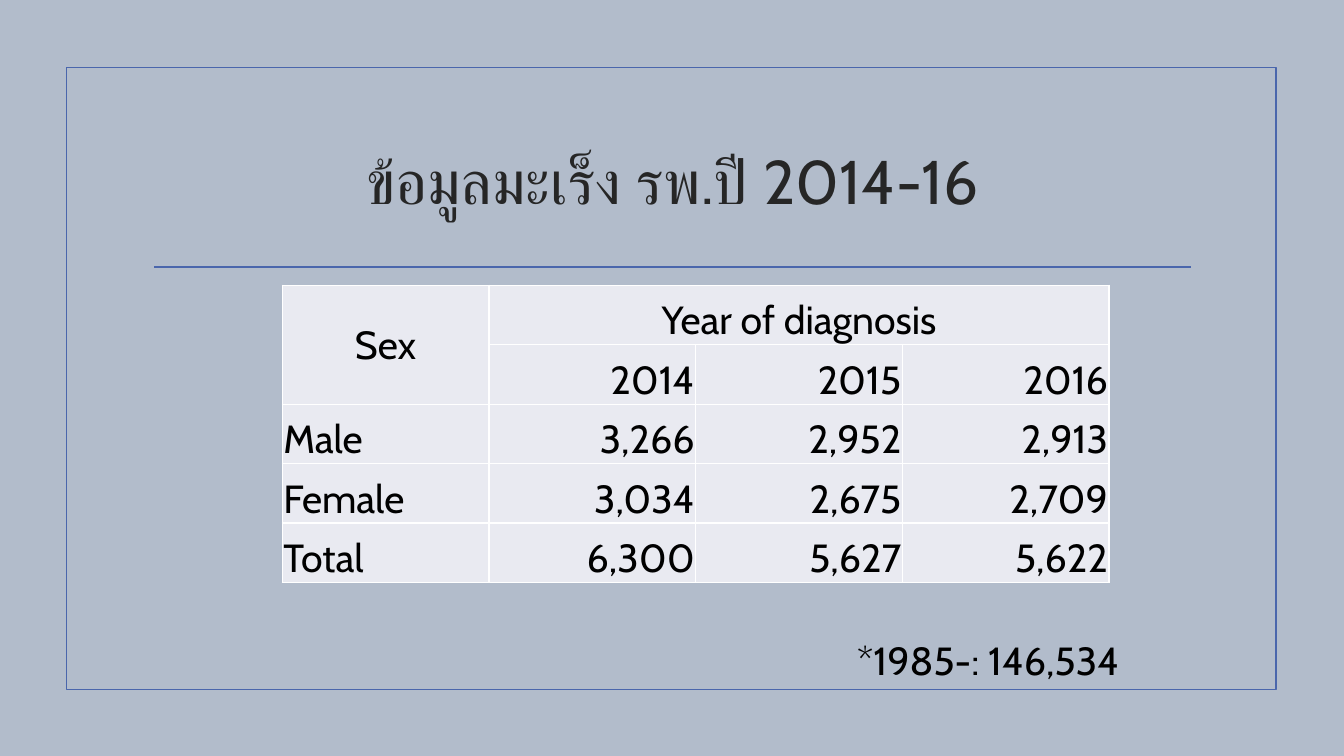
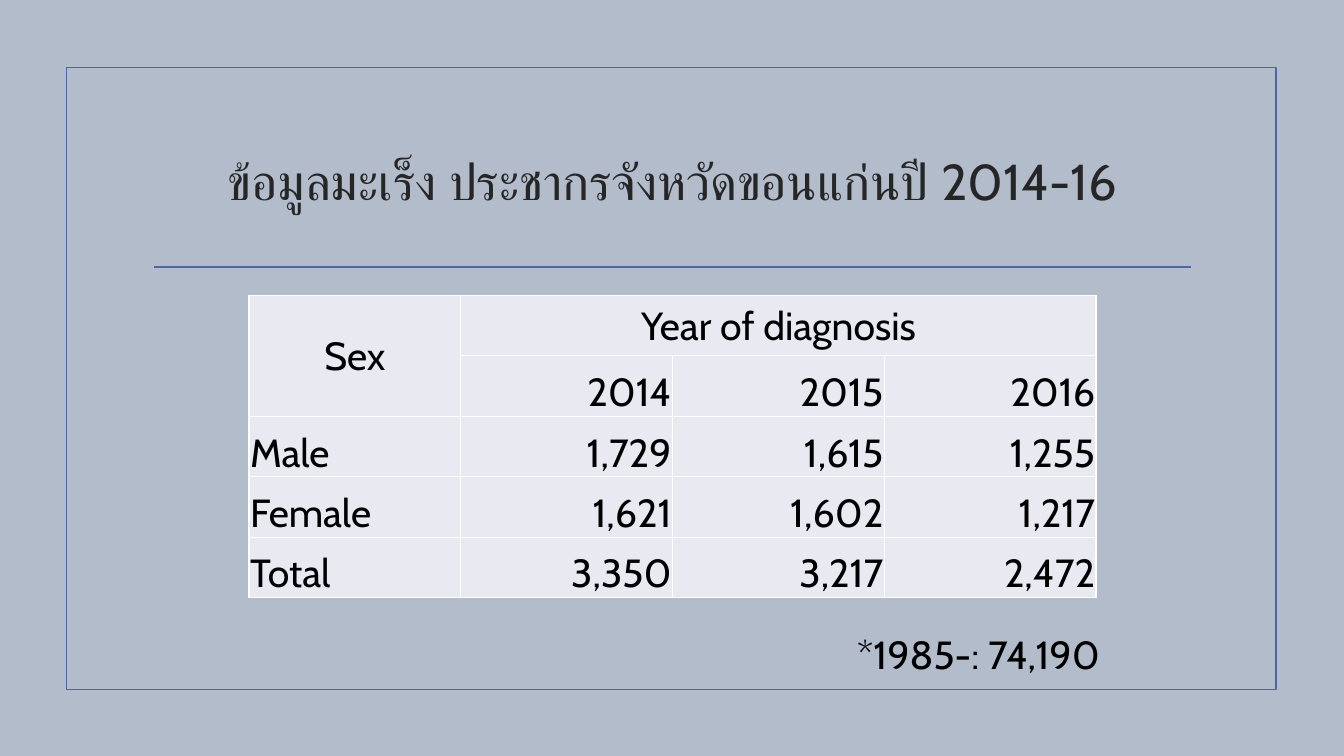
from dataclasses import dataclass
from typing import Any

from lxml import etree
from pptx import Presentation
from pptx.dml.color import RGBColor
from pptx.enum.shapes import MSO_CONNECTOR, MSO_SHAPE
from pptx.enum.text import MSO_ANCHOR, MSO_AUTO_SIZE, PP_ALIGN
from pptx.oxml.ns import qn
from pptx.util import Inches, Pt

STRAIGHT = MSO_CONNECTOR.STRAIGHT
RECT = MSO_SHAPE.RECTANGLE
TOP, MIDDLE, BOTTOM = MSO_ANCHOR.TOP, MSO_ANCHOR.MIDDLE, MSO_ANCHOR.BOTTOM
LEFT, CENTER, RIGHT = PP_ALIGN.LEFT, PP_ALIGN.CENTER, PP_ALIGN.RIGHT
GROW = MSO_AUTO_SIZE.SHAPE_TO_FIT_TEXT
FIXED = MSO_AUTO_SIZE.NONE

COLORS = {
    "back": "B2BCCB",
    "line": "4A66AC",
    "title": "262626",
    "text": "000000",
    "cell": "E9EAF1",
    "grid": "FFFFFF",
}
FONT = "Cabin"
BODY = 28
PAD = {
    "margin_left": Inches(0.01),
    "margin_top": Inches(0.01),
    "margin_right": Inches(0.01),
    "margin_bottom": Inches(0),
}


@dataclass
class Page:
    title: str
    size: int
    left: float
    top: float
    col: float
    row: float
    head: Any
    counts: list[list[str]]
    note: str
    base: float


PAGES = [
    Page("ข้อมูลมะเร็ง รพ.ปี 2014-16", 44, 2.8, 2.83, 2.05, 0.59, BOTTOM,
         [["Male", "3,266", "2,952", "2,913"],
          ["Female", "3,034", "2,675", "2,709"],
          ["Total", "6,300", "5,627", "5,622"]],
         "*1985-: 146,534", 6.26),
    Page("ข้อมูลมะเร็ง ประชากรจังหวัดขอนแก่นปี 2014-16", 36, 2.47, 2.93, 2.1, 0.6, MIDDLE,
         [["Male", "1,729", "1,615", "1,255"],
          ["Female", "1,621", "1,602", "1,217"],
          ["Total", "3,350", "3,217", "2,472"]],
         "*1985-: 74,190", 6.2),
]


def color(name: str) -> RGBColor:
    return RGBColor.from_string(COLORS[name])


def apply(item: Any, values: dict[str, Any]) -> None:
    for key, value in values.items():
        setattr(item, key, value)


def write(frame: Any, text: str, size: int, tint: str, align: Any) -> None:
    para = frame.paragraphs[0]
    para.alignment = align
    run = para.add_run()
    run.text = text
    apply(run.font, {"name": FONT, "size": Pt(size)})
    run.font.color.rgb = color(tint)


def stroke(shape: Any) -> None:
    shape.line.color.rgb = color("line")
    shape.line.width = Pt(1.25)


def add_frame(slide: Any) -> None:
    slide.background.fill.solid()
    slide.background.fill.fore_color.rgb = color("back")
    border = slide.shapes.add_shape(RECT, Inches(0.66), Inches(0.67), Inches(12), Inches(6.17))
    border.shadow.inherit = False
    border.fill.background()
    stroke(border)
    rule = slide.shapes.add_connector(STRAIGHT, Inches(1.53), Inches(2.65),
                                      Inches(11.81), Inches(2.65))
    stroke(rule)
    etree.SubElement(rule._element.spPr, qn("a:effectLst"))


def add_text(slide: Any, box: tuple[float, ...], text: str, size: int,
             tint: str, align: Any, form: dict[str, Any]) -> None:
    frame = slide.shapes.add_textbox(*map(Inches, box)).text_frame
    apply(frame, {"word_wrap": True, **form})
    write(frame, text, size, tint, align)


def add_grid(cell: Any) -> None:
    props = cell._tc.get_or_add_tcPr()
    for side in ("lnL", "lnR", "lnT", "lnB"):
        line = etree.SubElement(props, qn(f"a:{side}"), w=str(Pt(1)))
        fill = etree.SubElement(line, qn("a:solidFill"))
        etree.SubElement(fill, qn("a:srgbClr"), val=COLORS["grid"])


def add_counts(slide: Any, page: Page) -> None:
    rows = [["Sex", "Year of diagnosis", "", ""], ["", "2014", "2015", "2016"], *page.counts]
    high, wide = len(rows), len(rows[0])
    table = slide.shapes.add_table(high, wide, Inches(page.left), Inches(page.top),
                                   Inches(page.col * wide), Inches(page.row * high)).table
    apply(table, {"first_row": False, "horz_banding": False})
    for col in table.columns:
        col.width = Inches(page.col)
    for row in table.rows:
        row.height = Inches(page.row)
    table.cell(0, 0).merge(table.cell(1, 0))
    table.cell(0, 1).merge(table.cell(0, wide - 1))
    for r, row in enumerate(rows):
        for c, text in enumerate(row):
            cell = table.cell(r, c)
            add_grid(cell)
            cell.fill.solid()
            cell.fill.fore_color.rgb = color("cell")
            anchor = BOTTOM if r else page.head if c else MIDDLE
            apply(cell, {**PAD, "vertical_anchor": anchor})
            if text:
                align = CENTER if r == 0 else RIGHT if c else LEFT
                write(cell.text_frame, text, BODY, "text", align)


def main() -> None:
    deck = Presentation()
    apply(deck, {"slide_width": Inches(13.33), "slide_height": Inches(7.5)})
    for page in PAGES:
        slide = deck.slides.add_slide(deck.slide_layouts[6])
        add_frame(slide)
        add_text(slide, (1.42, 1.07, 10.5, 1.43), page.title, page.size, "title", CENTER,
                 {"vertical_anchor": MIDDLE, "auto_size": FIXED})
        add_counts(slide, page)
        add_text(slide, (8.4, page.base, 3.24, 0.57), page.note, BODY, "text", LEFT,
                 {"vertical_anchor": TOP, "auto_size": GROW})
    deck.save("out.pptx")


if __name__ == "__main__":
    main()
